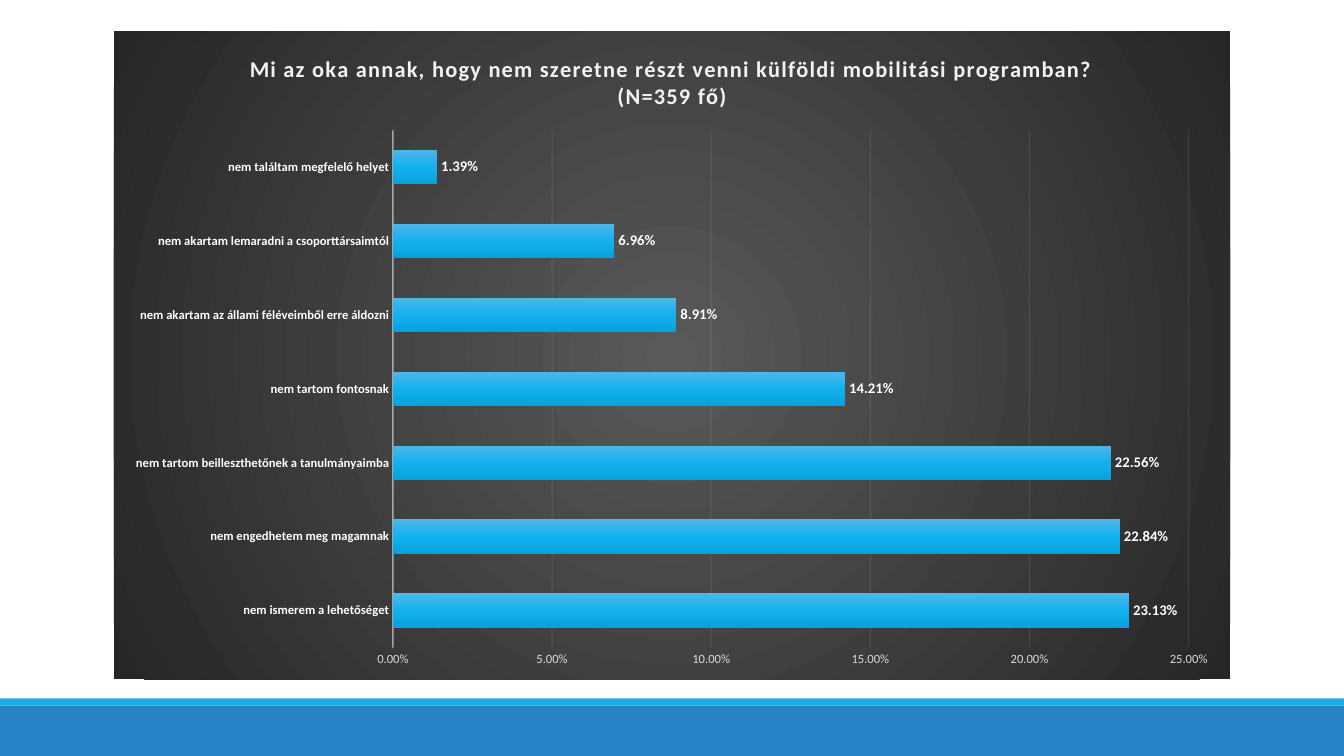
from dataclasses import dataclass

from lxml import etree
from pptx import Presentation
from pptx.chart.data import CategoryChartData
from pptx.dml.color import RGBColor
from pptx.enum.chart import XL_CHART_TYPE, XL_LABEL_POSITION, XL_TICK_MARK
from pptx.enum.shapes import MSO_SHAPE
from pptx.oxml import parse_xml
from pptx.oxml.ns import nsdecls, qn
from pptx.util import Inches, Pt

BAR_CLUSTERED = XL_CHART_TYPE.BAR_CLUSTERED
OUTSIDE_END = XL_LABEL_POSITION.OUTSIDE_END
NO_TICK = XL_TICK_MARK.NONE
RECTANGLE = MSO_SHAPE.RECTANGLE
BLANK_LAYOUT = 6

TITLE = "Mi az oka annak, hogy nem szeretne részt venni külföldi mobilitási programban? (N=359 fő)"
REASONS = [
    ("nem ismerem a lehetőséget", 0.2313),
    ("nem engedhetem meg magamnak", 0.2284),
    ("nem tartom beilleszthetőnek a tanulmányaimba", 0.2256),
    ("nem tartom fontosnak", 0.1421),
    ("nem akartam az állami féléveimből erre áldozni", 0.0891),
    ("nem akartam lemaradni a csoporttársaimtól", 0.0696),
    ("nem találtam megfelelő helyet", 0.0139),
]


@dataclass(frozen=True)
class Theme:
    font: str = "Calibri"
    band: str = "2683C6"
    stripe: str = "1CADE4"
    pale: str = "F2F2F2"
    label: str = "FFFFFF"
    tick: str = "D9D9D9"
    panel: tuple = ((0, "595959"), (100, "262626"))
    bar: tuple = ((0, "4FB6E9"), (50, "12B1EE"), (100, "06A2DD"))
    title_size: float = 16
    value_size: float = 10.5
    base_size: float = 10
    axis_size: float = 9


class SlideBuilder:
    def __init__(self, page, theme):
        self.page = page
        self.theme = theme

    def style_font(self, font, size, color, bold=False):
        font.name = self.theme.font
        font.size = Pt(size)
        font.bold = bold
        font.color.rgb = RGBColor.from_string(color)

    def style_line(self, line, owner, route, width, opacity):
        line.width = Pt(width)
        line.color.rgb = RGBColor.from_string(self.theme.pale)
        color = owner.xpath(f"{route}//a:srgbClr")[0]
        etree.SubElement(color, qn("a:alpha")).set("val", str(opacity * 1000))

    def gradient(self, stops, direction):
        marks = "".join(
            f'<a:gs pos="{position * 1000}"><a:srgbClr val="{color}"/></a:gs>'
            for position, color in stops
        )
        return parse_xml(
            f'<a:gradFill {nsdecls("a")}><a:gsLst>{marks}</a:gsLst>{direction}</a:gradFill>'
        )

    def band(self, top, height, color):
        shape = self.page.shapes.add_shape(
            RECTANGLE, 0, Inches(top), Inches(13.33), Inches(height)
        )
        shape.shadow.inherit = False
        shape.fill.solid()
        shape.fill.fore_color.rgb = RGBColor.from_string(color)
        shape.line.fill.background()

    def bar_chart(self, left, top, width, height, title, rows):
        theme = self.theme
        data = CategoryChartData(number_format="0.00%")
        data.categories = [name for name, _ in rows]
        data.add_series("Series 1", [value for _, value in rows])
        chart = self.page.shapes.add_chart(
            BAR_CLUSTERED, Inches(left), Inches(top), Inches(width), Inches(height), data
        ).chart
        self.style_font(chart.font, theme.base_size, "000000")
        chart.has_legend = False
        self.chart_title(chart, title)
        self.chart_panel(chart)
        self.bars(chart.plots[0])
        self.axes(chart)

    def chart_title(self, chart, title):
        chart.has_title = True
        para = chart.chart_title.text_frame.paragraphs[0]
        span = para.add_run()
        span.text = title
        self.style_font(span.font, self.theme.title_size, self.theme.pale, True)
        span._r.get_or_add_rPr().set("spc", "100")
        chart.chart_title.include_in_layout = False

    def chart_panel(self, chart):
        space = chart._chartSpace
        panel = parse_xml(f'<c:spPr {nsdecls("c", "a")}><a:ln><a:noFill/></a:ln></c:spPr>')
        center = (
            '<a:path path="circle">'
            '<a:fillToRect l="50000" t="50000" r="50000" b="50000"/></a:path>'
        )
        panel.insert(0, self.gradient(self.theme.panel, center))
        space.find(qn("c:chart")).addnext(panel)

        plot_area = space.xpath("c:chart/c:plotArea")[0]
        for previous in plot_area.findall(qn("c:layout")):
            plot_area.remove(previous)
        frame = "".join(
            f'<c:{name} val="{value}"/>'
            for name, value in (
                ("layoutTarget", "inner"), ("xMode", "edge"), ("yMode", "edge"),
                ("x", 0.25), ("y", 0.153), ("w", 0.713), ("h", 0.798),
            )
        )
        plot_area.insert(0, parse_xml(
            f'<c:layout {nsdecls("c")}><c:manualLayout>{frame}</c:manualLayout></c:layout>'
        ))

    def bars(self, plot):
        plot.gap_width = 115
        plot.overlap = -20
        plot.vary_by_categories = False
        fill = self.gradient(self.theme.bar, '<a:lin ang="5400000" scaled="0"/>')
        plot.series[0]._element.get_or_add_spPr().insert(0, fill)
        plot.has_data_labels = True
        labels = plot.data_labels
        labels.show_value = True
        labels.number_format = "0.00%"
        labels.number_format_is_linked = False
        labels.position = OUTSIDE_END
        self.style_font(labels.font, self.theme.value_size, self.theme.label, True)

    def axes(self, chart):
        theme = self.theme
        reasons, shares = chart.category_axis, chart.value_axis
        for axis in (reasons, shares):
            axis.major_tick_mark = NO_TICK
            axis.minor_tick_mark = NO_TICK
        self.style_font(reasons.tick_labels.font, theme.axis_size, theme.label, True)
        self.style_line(reasons.format.line, reasons._element, "c:spPr", 1, 54)

        shares.minimum_scale = 0
        shares.maximum_scale = 0.25
        shares.major_unit = 0.05
        shares.tick_labels.number_format = "0.00%"
        shares.tick_labels.number_format_is_linked = False
        self.style_font(shares.tick_labels.font, theme.axis_size, theme.tick)
        shares.format.line.fill.background()
        shares.has_major_gridlines = True
        grid = shares.major_gridlines.format.line
        self.style_line(grid, shares._element, "c:majorGridlines", 0.75, 10)


def main():
    deck = Presentation()
    deck.slide_width = Inches(13.33)
    deck.slide_height = Inches(7.5)
    theme = Theme()
    page = deck.slides.add_slide(deck.slide_layouts[BLANK_LAYOUT])
    builder = SlideBuilder(page, theme)
    builder.band(7, 0.5, theme.band)
    builder.band(6.93, 0.07, theme.stripe)
    builder.bar_chart(1.13, 0.31, 11.07, 6.43, TITLE, REASONS)
    deck.save("out.pptx")


if __name__ == "__main__":
    main()
